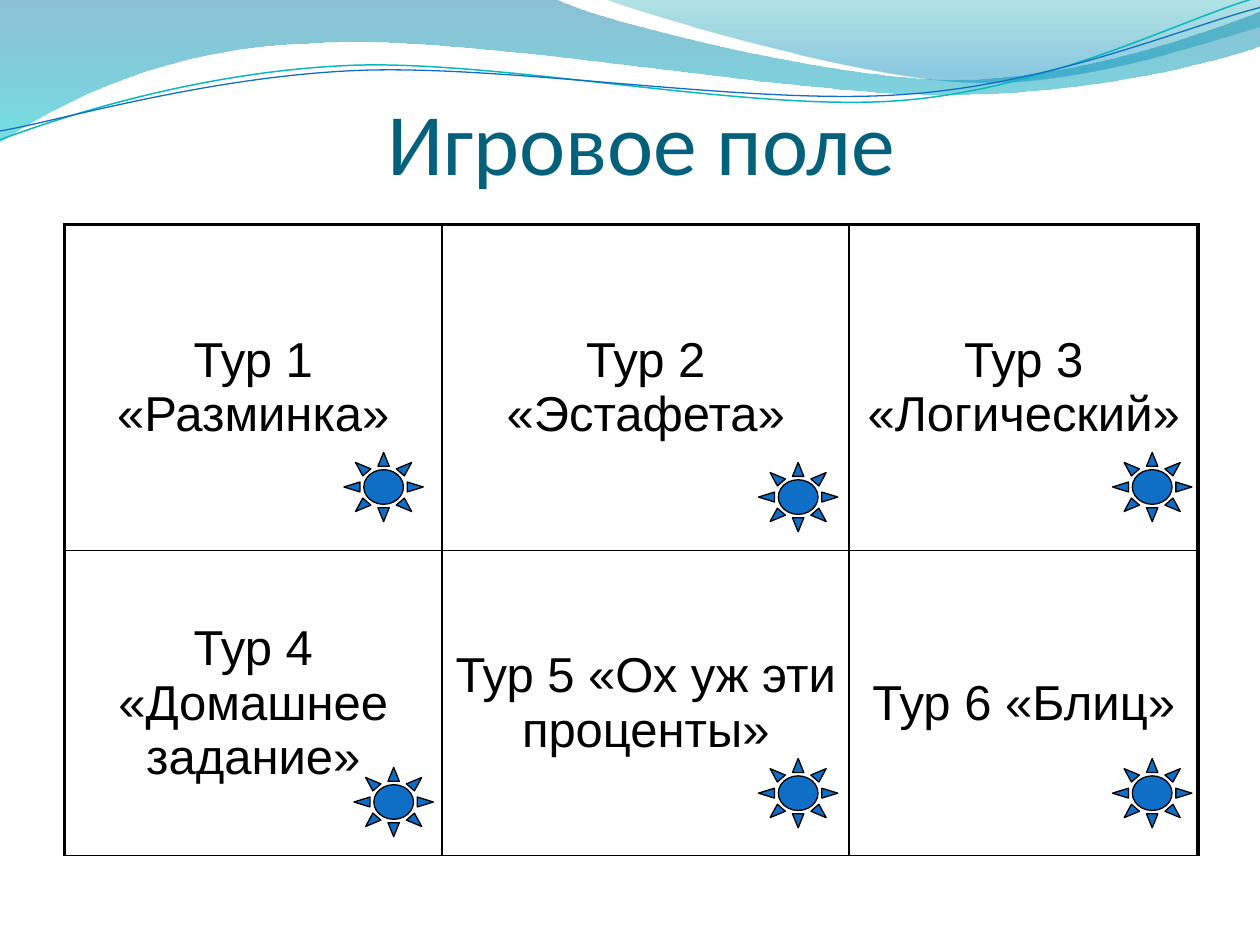
from lxml import etree
from pptx import Presentation, util as u
from pptx.dml.color import RGBColor
from pptx.enum import shapes, text
from pptx.oxml.ns import qn

COLORS = {"title": "04617B", "ink": "000000", "sun": "0F6FC6", "teal_line": "0AB8BF",
          "blue": "0074A1", "cyan": "00C6CF", "teal": "00A1A9", "sky": "008BBF"}
TITLE = "Игровое поле"
ROUNDS = [["Тур 1 «Разминка»", "Тур 2 «Эстафета»", "Тур 3 «Логический»"],
          ["Тур 4 «Домашнее задание»", "Тур 5 «Ох уж эти проценты»", "Тур 6 «Блиц»"]]
COL_WIDTHS = [3, 3.23, 2.77]
ROW_HEIGHTS = [2.59, 2.42]
SUNS = [(2.73, 3.59), (6.02, 3.67), (8.83, 3.59), (2.81, 6.09), (6.02, 6.02), (8.83, 6.02)]

BANDS = [
    ([(0, 0), (4.4, -0.01), (4.76, 0.17, 6.64, 0.63, 7.58, 0.63),
      (8.53, 0.63, 9.58, 0.26, 10, 0.09), (10.01, 0.36),
      (9.83, 0.44, 8.7, 0.76, 7.46, 0.75), (6.22, 0.75, 3.82, 0.28, 2.57, 0.34),
      (1.29, 0.36, 0.46, 0.83, -0.01, 1.13), (0, 0)],
     [(0, "blue", 45), (1, "cyan", 55)]),
    ([(4.79, -0.01), (5.09, 0.11, 6.82, 0.62, 7.69, 0.65),
      (8.56, 0.69, 9.61, 0.32, 10, 0.21), (10, 0), (4.79, -0.01)],
     [(0, "teal", 30), (0.8, "sky", 45)]),
]
STROKES = [
    ([(0, 1.11), (0.48, 0.93, 1.58, 0.57, 2.77, 0.52), (3.95, 0.47, 5.93, 0.89, 7.13, 0.8),
      (8.33, 0.71, 9.38, 0.15, 9.98, -0.02)], "teal_line", 0.85),
    ([(0, 1.04), (0.47, 0.96, 1.64, 0.61, 2.83, 0.56), (4.03, 0.51, 5.97, 0.84, 7.17, 0.75),
      (8.36, 0.67, 9.41, 0.21, 10, 0.06)], "sun", 0.75),
]


def rgb(name):
    return RGBColor.from_string(COLORS[name])


def add_wave(s, segments, close):
    points = [(u.Inches(x), u.Inches(y))
              for seg in segments for x, y in zip(seg[::2], seg[1::2])]
    builder = s.shapes.build_freeform(*points[0], scale=1.0)
    builder.add_line_segments(points[1:], close=close)
    sp = builder.convert_to_shape()
    sp.shadow.inherit = False
    nodes = iter(list(sp._element.iter(qn("a:lnTo"))))
    for seg in segments[1:]:
        node = next(nodes)
        if len(seg) == 6:
            node.tag = qn("a:cubicBezTo")
            for extra in (next(nodes), next(nodes)):
                node.append(extra[0])
                extra.getparent().remove(extra)
    return sp


def add_band(s, segments, stops):
    sp = add_wave(s, segments, True)
    sp.line.fill.background()
    sp.fill.gradient()
    sp.fill.gradient_angle = 270
    for stop, (position, color, _) in zip(sp.fill.gradient_stops, stops):
        stop.position = position
        stop.color.rgb = rgb(color)
    for clr, (_, _, opacity) in zip(sp._element.iter(qn("a:srgbClr")), stops):
        etree.SubElement(clr, qn("a:alpha"), val=str(opacity * 1000))


def add_stroke(s, segments, color, width):
    sp = add_wave(s, segments, False)
    sp.fill.background()
    sp.line.color.rgb = rgb(color)
    sp.line.width = u.Pt(width)


def write(tf, content, font, size, color):
    p = tf.paragraphs[0]
    p.text = content
    p.alignment = text.PP_ALIGN.CENTER
    p.font.name = font
    p.font.size = u.Pt(size)
    p.font.color.rgb = rgb(color)
    return p


def add_title(s):
    tf = s.shapes.add_textbox(*map(u.Inches, (0.59, 0.28, 9, 1.25))).text_frame
    tf.word_wrap = True
    tf.vertical_anchor = text.MSO_ANCHOR.BOTTOM
    tf.margin_left = tf.margin_right = tf.margin_bottom = 0
    write(tf, TITLE, "Calibri", 50, "title")


def set_borders(cell, widths):
    tc_pr = cell._tc.get_or_add_tcPr()
    for i, (side, width) in enumerate(widths.items()):
        ln = etree.Element(qn("a:ln" + side), w=str(u.Pt(width)))
        fill = etree.SubElement(ln, qn("a:solidFill"))
        etree.SubElement(fill, qn("a:srgbClr"), val=COLORS["ink"])
        tc_pr.insert(i, ln)


def add_field(s):
    box = map(u.Inches, (0.51, 1.78, sum(COL_WIDTHS), sum(ROW_HEIGHTS)))
    table = s.shapes.add_table(len(ROW_HEIGHTS), len(COL_WIDTHS), *box).table
    table.first_row = table.horz_banding = False
    for col, width in zip(table.columns, COL_WIDTHS):
        col.width = u.Inches(width)
    for row, height in zip(table.rows, ROW_HEIGHTS):
        row.height = u.Inches(height)
    last = len(COL_WIDTHS) - 1
    for r, names in enumerate(ROUNDS):
        for c, name in enumerate(names):
            cell = table.cell(r, c)
            cell.fill.background()
            cell.vertical_anchor = text.MSO_ANCHOR.MIDDLE
            p = write(cell.text_frame, name, "Arial", 28, "ink")
            p.space_before = u.Pt(5.6)
            set_borders(cell, {"L": 2.25 if c == 0 else 1, "R": 2.25 if c == last else 1,
                               "T": 2.25 if r == 0 else 1, "B": 1})


def add_sun(s, x, y):
    sp = s.shapes.add_shape(shapes.MSO_SHAPE.SUN, *map(u.Inches, (x, y, 0.63, 0.55)))
    sp.shadow.inherit = False
    sp.fill.solid()
    sp.fill.fore_color.rgb = rgb("sun")
    sp.line.color.rgb = rgb("ink")
    sp.line.width = u.Pt(0.75)


def main():
    prs = Presentation()
    prs.slide_width, prs.slide_height = u.Inches(10), u.Inches(7.5)
    s = prs.slides.add_slide(prs.slide_layouts[6])
    for band in BANDS:
        add_band(s, *band)
    for stroke in STROKES:
        add_stroke(s, *stroke)
    add_title(s)
    add_field(s)
    for x, y in SUNS:
        add_sun(s, x, y)
    prs.save("out.pptx")


if __name__ == "__main__":
    main()
